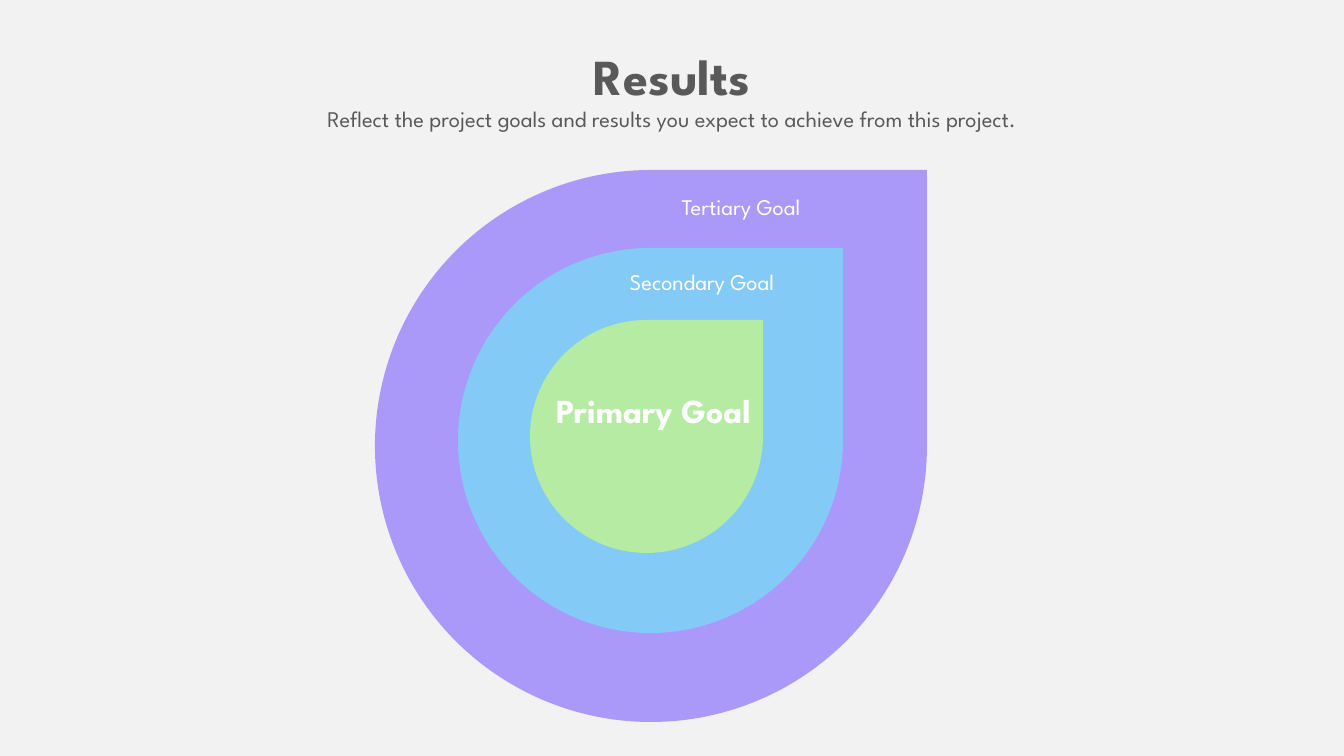
from dataclasses import dataclass

from pptx import Presentation
from pptx import util as u
from pptx.dml.color import RGBColor
from pptx.enum import shapes, text

EMU_PER_PX = 914400 / 100.8


@dataclass(frozen=True)
class Theme:
    """Colours, font and type sizes of the slide."""
    font: str = "League Spartan"
    background: str = "F2F2F2"
    ink: str = "595959"
    light: str = "FFFFFF"
    tertiary: str = "AA99F9"
    secondary: str = "84CAF7"
    primary: str = "B5EBA2"
    title_size: int = 36
    goal_size: int = 24
    body_size: int = 16


THEME = Theme()


def px(*lengths):
    """Turn pixel lengths into EMU."""
    return [u.Emu(round(length * EMU_PER_PX)) for length in lengths]


def paint(fill, colour):
    """Give a fill one solid colour."""
    fill.solid()
    fill.fore_color.rgb = RGBColor.from_string(colour)


def write(frame, lines, colour):
    """Write centred lines of (words, size, bold) into a text frame."""
    frame.word_wrap = True
    frame.auto_size = text.MSO_AUTO_SIZE.NONE
    frame.vertical_anchor = text.MSO_ANCHOR.TOP
    frame.text = "\n".join(words for words, _, _ in lines)
    for para, (_, size, bold) in zip(frame.paragraphs, lines):
        para.alignment = text.PP_ALIGN.CENTER
        para.font.name = THEME.font
        para.font.size = u.Pt(size)
        para.font.bold = bold
        para.font.color.rgb = RGBColor.from_string(colour)


def add_heading(page, box):
    """Fill the title placeholder with the heading and its subtitle."""
    title = page.shapes.title
    title.left, title.top, title.width, title.height = px(*box)
    subtitle = "Reflect the project goals and results you expect to achieve from this project."
    write(title.text_frame, [("Results", THEME.title_size, True),
                             (subtitle, THEME.body_size, False)], THEME.ink)


def add_goals(page, box):
    """Nest the three goal teardrops in a box and label each one."""
    left, top, width, _ = box
    drops = [
        (0, 0, width, THEME.tertiary),
        (83, 78, 385, THEME.secondary),
        (155, 150, 233, THEME.primary),
    ]
    labels = [
        ("Tertiary Goal", THEME.body_size, False, (201, 18, 330, 37)),
        ("Secondary Goal", THEME.body_size, False, (187, 93, 280, 37)),
        ("Primary Goal", THEME.goal_size, True, (169, 215, 219, 92)),
    ]
    for x, y, side, colour in drops:
        drop = page.shapes.add_shape(shapes.MSO_SHAPE.TEAR,
                                     *px(left + x, top + y, side, side))
        drop.shadow.inherit = False
        drop.line.fill.background()
        paint(drop.fill, colour)
    for words, size, bold, (x, y, wide, high) in labels:
        label = page.shapes.add_textbox(*px(left + x, top + y, wide, high))
        write(label.text_frame, [(words, size, bold)], THEME.light)


def main():
    """Build the results slide and save it."""
    deck = Presentation()
    deck.slide_width, deck.slide_height = px(1344, 756)
    page = deck.slides.add_slide(deck.slide_layouts[5])
    paint(page.background.fill, THEME.background)
    add_heading(page, (142, 40, 1060, 102))
    add_goals(page, (375, 170, 552, 552))
    deck.save("out.pptx")


if __name__ == "__main__":
    main()
